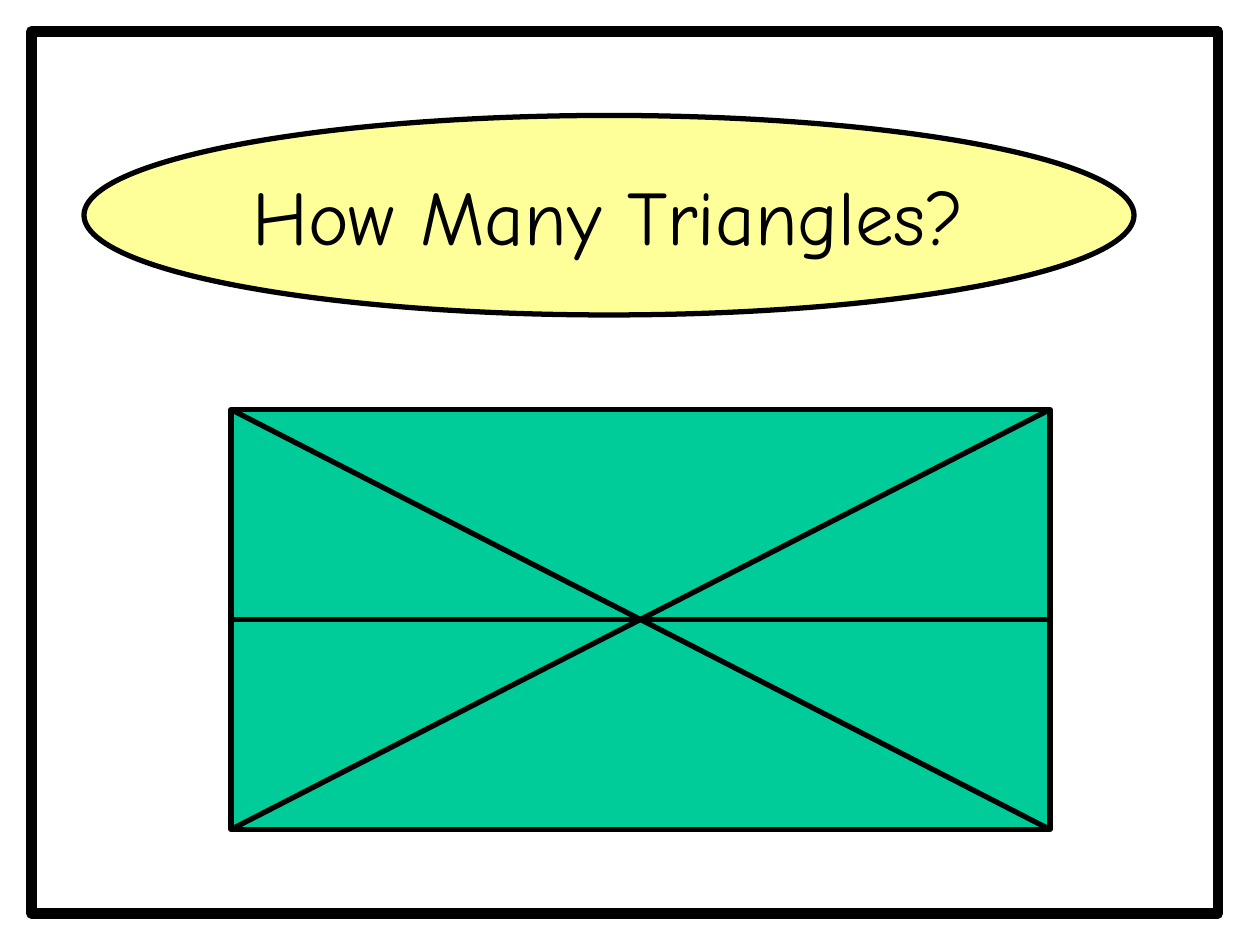
from pptx import Presentation, util as u
from pptx.dml import color
from pptx.enum import shapes, text
from pptx.oxml import ns
from lxml import etree


def rgb(hex_string):
    return color.RGBColor.from_string(hex_string)


def outline(sp, width):
    sp.line.color.rgb = rgb("000000")
    sp.line.width = u.Pt(width)


prs = Presentation()
prs.slide_width, prs.slide_height = u.Pt(720), u.Pt(540)
s = prs.slides.add_slide(prs.slide_layouts[6])

# Title ellipse, puzzle rectangle and slide frame
left, top, width, height = 132, 234, 468, 240
right, bottom, middle = left + width, top + height, top + height / 2
kinds = shapes.MSO_SHAPE
parts = {
    "title": (kinds.OVAL, (48, 66, 600, 114), "FFFF99", 3),
    "puzzle": (kinds.RECTANGLE, (left, top, width, height), "00CC99", 3),
    "frame": (kinds.RECTANGLE, (18, 18, 678, 504), None, 6),
}
made = {}
for name, (kind, box, fill, weight) in parts.items():
    sp = s.shapes.add_shape(kind, *(u.Pt(v) for v in box))
    sp.shadow.inherit = False
    if fill:
        sp.fill.solid()
        sp.fill.fore_color.rgb = rgb(fill)
    else:
        sp.fill.background()
    outline(sp, weight)
    made[name] = sp

# Title text
tf = made["title"].text_frame
for key, value in {"word_wrap": False,
                   "vertical_anchor": text.MSO_ANCHOR.MIDDLE}.items():
    setattr(tf, key, value)
p = tf.paragraphs[0]
p.alignment = text.PP_ALIGN.CENTER
r = p.add_run()
r.text = "How Many Triangles?"
for key, value in {"name": "Comic Neue", "size": u.Pt(44)}.items():
    setattr(r.font, key, value)
r.font.color.rgb = rgb("000000")

# Two diagonals and the horizontal middle line
for y1, y2 in ((top, bottom), (bottom, top), (middle, middle)):
    c = s.shapes.add_connector(shapes.MSO_CONNECTOR.STRAIGHT,
                               u.Pt(left), u.Pt(y1), u.Pt(right), u.Pt(y2))
    if y1 == y2:
        c.begin_connect(made["puzzle"], 1)
        c.end_connect(made["puzzle"], 3)
    outline(c, 3)
    etree.SubElement(c._element.spPr, ns.qn("a:effectLst"))

prs.save("out.pptx")
